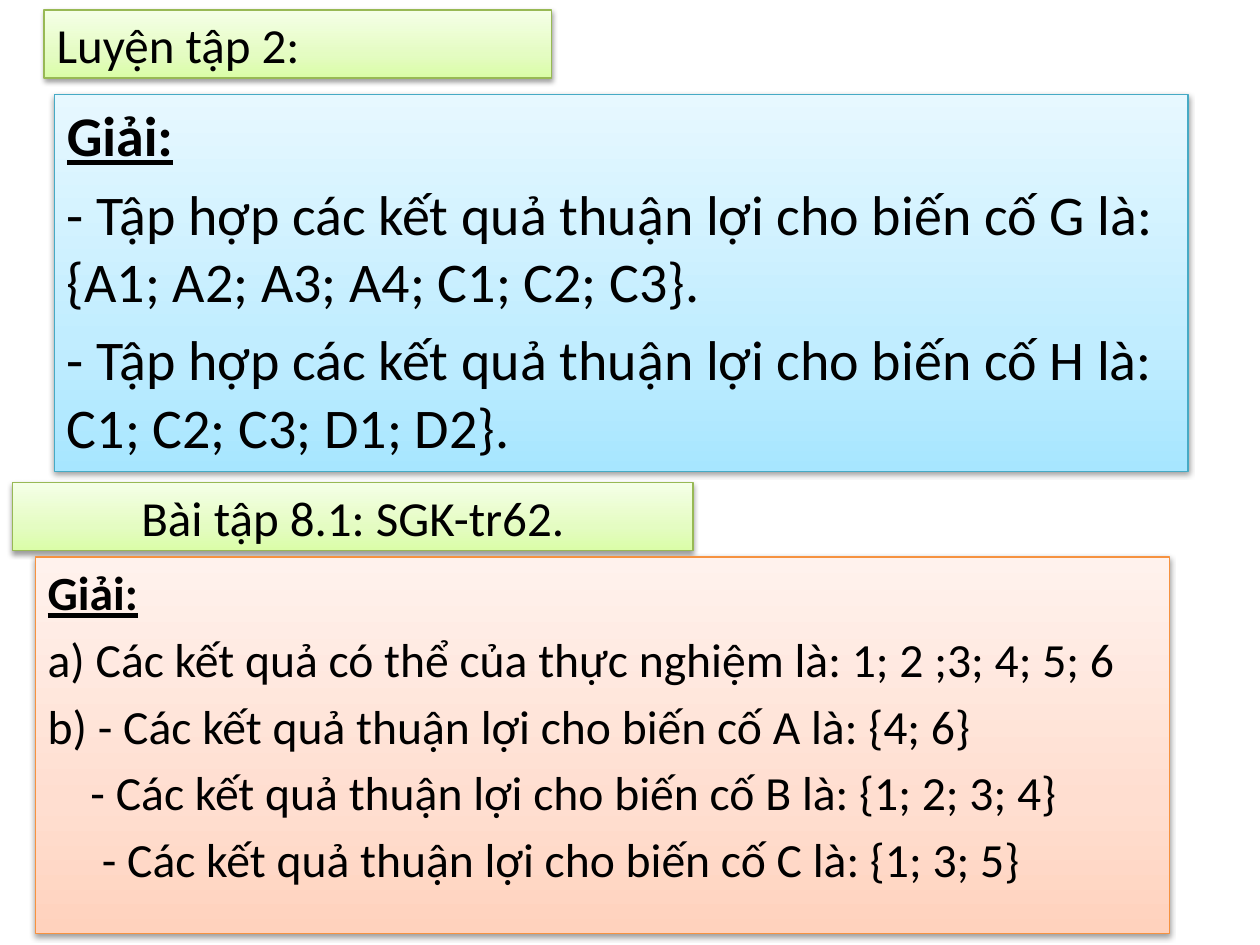
from dataclasses import dataclass

from lxml.etree import SubElement
from pptx import Presentation
from pptx.dml.color import RGBColor
from pptx.enum.shapes import MSO_SHAPE
from pptx.enum.text import MSO_ANCHOR, MSO_AUTO_SIZE, PP_ALIGN
from pptx.oxml.ns import qn
from pptx.util import Inches, Pt


@dataclass(frozen=True)
class Palette:
    line: str
    stops: tuple  # (position in percent, colour), from bottom to top


@dataclass(frozen=True)
class Theme:
    font: str = "Calibri"
    ink: str = "000000"
    heading_size: float = 28
    practice_size: float = 32
    exercise_size: float = 27.2
    green: Palette = Palette("98B955", ((0, "DAFDA7"), (35, "E4FCC2"), (100, "F5FFE7")))
    blue: Palette = Palette("46AAC5", ((0, "A7E6FF"), (35, "C1EDFF"), (100, "E7F8FF")))
    orange: Palette = Palette("F69240", ((0, "FFD2BD"), (35, "FFDED0"), (100, "FFF2ED")))


THEME = Theme()
SOLUTION_TITLE = "Giải:"
# Each solution line is (left indent in inches, text)
PRACTICE_LINES = (
    (0, "- Tập hợp các kết quả thuận lợi cho biến cố G là: {A1; A2; A3; A4; C1; C2; C3}."),
    (0, "- Tập hợp các kết quả thuận lợi cho biến cố H là: C1; C2; C3; D1; D2}."),
)
EXERCISE_LINES = (
    (0, "a) Các kết quả có thể của thực nghiệm là: 1; 2 ;3; 4; 5; 6"),
    (0, "b) - Các kết quả thuận lợi cho biến cố A là: {4; 6}"),
    (0.34, "- Các kết quả thuận lợi cho biến cố B là: {1; 2; 3; 4}"),
    (0.43, "- Các kết quả thuận lợi cho biến cố C là: {1; 3; 5}"),
)


def add_color(parent, color, **transforms):
    node = SubElement(parent, qn("a:srgbClr"), val=color)
    for name, value in transforms.items():
        SubElement(node, qn(f"a:{name}"), val=str(value))


def style_panel(panel, box, palette):
    """Place a panel and give it a vertical gradient, thin outline and soft shadow."""
    panel.left, panel.top, panel.width, panel.height = map(Inches, box)
    panel.fill.gradient()
    panel.fill.gradient_angle = 90
    properties = panel._element.spPr
    stops = properties.find(".//" + qn("a:gsLst"))
    stops.clear()
    for position, color in palette.stops:
        add_color(SubElement(stops, qn("a:gs"), pos=str(position * 1000)), color)
    panel.line.color.rgb = RGBColor.from_string(palette.line)
    panel.line.width = Pt(0.75)
    panel.shadow.inherit = False
    shadow = SubElement(
        properties.find(qn("a:effectLst")), qn("a:outerShdw"),
        blurRad=str(Pt(3.1)), dist=str(Pt(1.6)), dir="5400000", rotWithShape="0")
    add_color(shadow, THEME.ink, alpha=38000)


def prepare_text(panel, anchor):
    frame = panel.text_frame
    frame.word_wrap = True
    frame.auto_size = MSO_AUTO_SIZE.NONE
    frame.vertical_anchor = anchor
    return frame


def add_run(paragraph, text, size, emphasis=False):
    run = paragraph.add_run()
    run.text = text
    font = run.font
    font.name, font.size = THEME.font, Pt(size)
    font.color.rgb = RGBColor.from_string(THEME.ink)
    font.bold = font.underline = emphasis


def build_heading(panel, box, text, alignment):
    style_panel(panel, box, THEME.green)
    paragraph = prepare_text(panel, MSO_ANCHOR.MIDDLE).paragraphs[0]
    paragraph.alignment = alignment
    add_run(paragraph, text, THEME.heading_size)


def build_solution(panel, box, palette, lines, size):
    style_panel(panel, box, palette)
    frame = prepare_text(panel, MSO_ANCHOR.TOP)
    for index, (indent, text) in enumerate(((0, SOLUTION_TITLE), *lines)):
        paragraph = frame.add_paragraph() if index else frame.paragraphs[0]
        paragraph.alignment = PP_ALIGN.LEFT
        layout = paragraph._p.get_or_add_pPr()
        layout.set("marL", str(Inches(indent)))
        layout.set("indent", "0")
        SubElement(SubElement(layout, qn("a:spcBef")), qn("a:spcPct"), val="20000")
        SubElement(layout, qn("a:buNone"))
        add_run(paragraph, text, size, emphasis=index == 0)


def add_panel(slide):
    return slide.shapes.add_shape(MSO_SHAPE.RECTANGLE, 0, 0, Inches(1), Inches(1))


def main():
    deck = Presentation()
    deck.slide_width, deck.slide_height = Inches(10), Inches(7.5)
    slide = deck.slides.add_slide(deck.slide_layouts[1])
    build_heading(slide.shapes.title, (0.35, 0.08, 4.03, 0.54),
                  "Luyện tập 2:", PP_ALIGN.LEFT)
    build_solution(slide.placeholders[1], (0.43, 0.75, 9, 2.99),
                   THEME.blue, PRACTICE_LINES, THEME.practice_size)
    build_heading(add_panel(slide), (0.1, 3.83, 5.4, 0.54),
                  "Bài tập 8.1: SGK-tr62.", PP_ALIGN.CENTER)
    build_solution(add_panel(slide), (0.28, 4.42, 9, 2.99),
                   THEME.orange, EXERCISE_LINES, THEME.exercise_size)
    deck.save("out.pptx")


if __name__ == "__main__":
    main()
